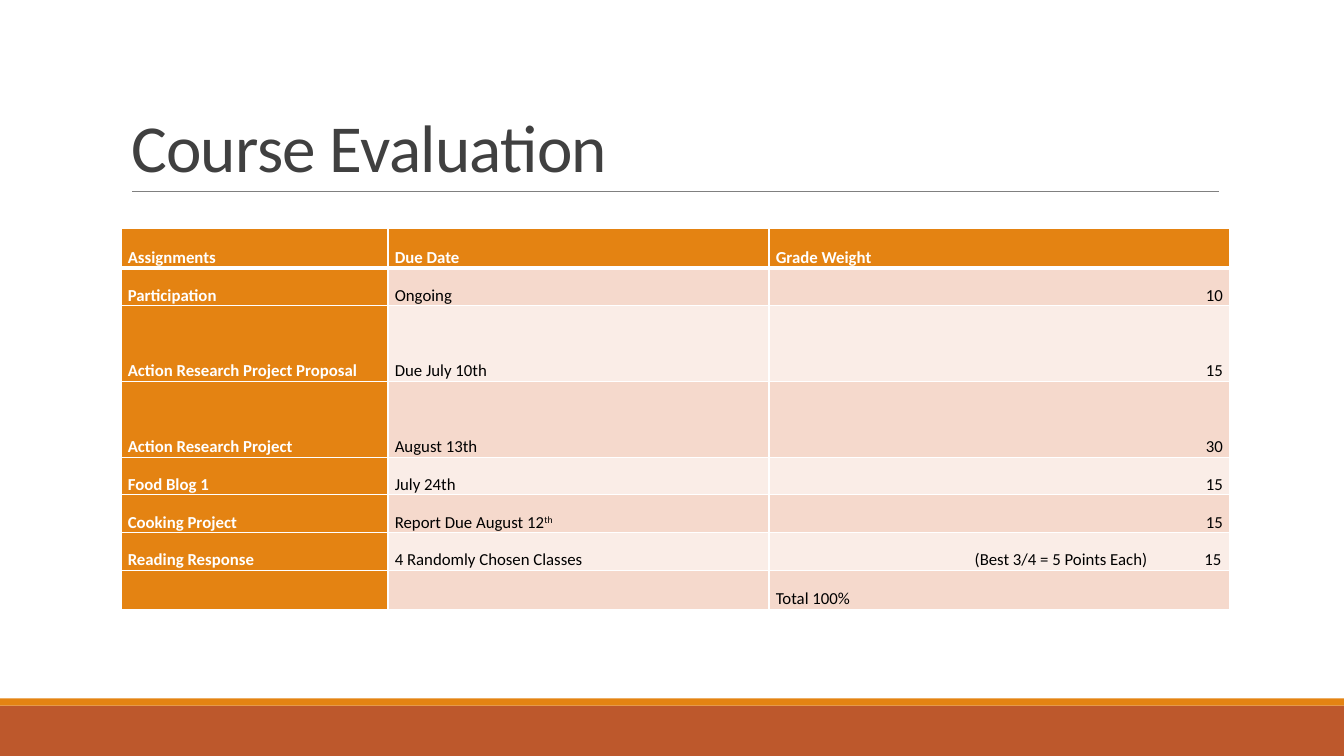
from dataclasses import dataclass

from lxml import etree
from pptx import Presentation
from pptx.dml.color import RGBColor
from pptx.enum.shapes import MSO_CONNECTOR, MSO_SHAPE
from pptx.enum.text import MSO_ANCHOR, MSO_AUTO_SIZE, PP_ALIGN
from pptx.oxml.ns import qn
from pptx.util import Cm, Pt

RECT = MSO_SHAPE.RECTANGLE
LINE = MSO_CONNECTOR.STRAIGHT
BOTTOM = MSO_ANCHOR.BOTTOM
NO_FIT = MSO_AUTO_SIZE.NONE
LEFT, RIGHT = PP_ALIGN.LEFT, PP_ALIGN.RIGHT


@dataclass(frozen=True)
class Theme:
    font: str = "Calibri"
    title: int = 48
    body: int = 12
    ink: str = "404040"
    text: str = "000000"
    white: str = "FFFFFF"
    orange: str = "E48312"
    rust: str = "BD582C"
    rule: str = "808080"
    bands: tuple = ("FAEDE7", "F5D9CC")


THEME = Theme()
WIDTH, HEIGHT = 33.87, 19.05
COLS = (6.73, 9.6, 11.61)
SHORT, TALL = 0.95, 1.91

# Each row: height, then the three cells; ^ starts a superscript
ROWS = (
    (1.0, "Assignments", "Due Date", "Grade Weight"),
    (SHORT, "Participation", "Ongoing", "10"),
    (TALL, "Action Research Project Proposal", "Due July 10th", "15"),
    (TALL, "Action Research Project", "August 13th", "30"),
    (SHORT, "Food Blog 1", "July 24th", "15"),
    (SHORT, "Cooking Project", "Report Due August 12^th", "15"),
    (SHORT, "Reading Response", "4 Randomly Chosen Classes",
     "\t(Best 3/4 = 5 Points Each)\t15"),
    (0.98, "", "", "Total 100%"),
)
TABS = (9.37, 11.23)


def color(code):
    return RGBColor.from_string(code)


def style(para, size, code, bold=False):
    font = para.font
    font.name, font.size, font.bold = THEME.font, Pt(size), bold
    font.color.rgb = color(code)


def add_bar(slide, left, top, width, height, code):
    bar = slide.shapes.add_shape(RECT, Cm(left), Cm(top), Cm(width), Cm(height))
    bar.shadow.inherit = False
    bar.fill.solid()
    bar.fill.fore_color.rgb = color(code)
    bar.line.fill.background()


def add_foot(slide, left, top, width, height):
    strip = 0.18
    add_bar(slide, left, top + strip, width, height - strip, THEME.rust)
    add_bar(slide, left, top, width, strip, THEME.orange)


def add_title(slide, left, top, width, height, words):
    # Rule under the title
    inset, base = 0.28, top + height
    rule = slide.shapes.add_connector(
        LINE, Cm(left + inset), Cm(base), Cm(left + width - 0.26), Cm(base))
    rule.line.color.rgb = color(THEME.rule)
    rule.line.width = Pt(0.5)
    etree.SubElement(rule._element.spPr, qn("a:effectLst"))

    # Title text
    title = slide.shapes.title
    title.left, title.top = Cm(left), Cm(top)
    title.width, title.height = Cm(width), Cm(height)
    frame = title.text_frame
    frame.word_wrap = True
    frame.auto_size = NO_FIT
    frame.vertical_anchor = BOTTOM
    para = frame.paragraphs[0]
    para.alignment = LEFT
    para.line_spacing = 0.85
    style(para, THEME.title, THEME.ink)
    run = para.add_run()
    run.text = words
    run._r.get_or_add_rPr().set("spc", "-50")


def add_edges(cell, row):
    props = cell._tc.get_or_add_tcPr()
    heavy = {(0, "lnB"), (1, "lnT")}
    for side in ("lnL", "lnR", "lnT", "lnB"):
        width = Pt(3 if (row, side) in heavy else 1)
        edge = etree.SubElement(props, qn("a:" + side), w=str(width))
        fill = etree.SubElement(edge, qn("a:solidFill"))
        etree.SubElement(fill, qn("a:srgbClr"), val=THEME.white)


def add_tabs(para):
    tabs = etree.SubElement(para._p.get_or_add_pPr(), qn("a:tabLst"))
    for stop in TABS:
        etree.SubElement(tabs, qn("a:tab"), pos=str(Cm(stop)), algn="r")


def fill_cell(cell, row, col, words):
    head = row == 0 or col == 0
    cell.margin_left = cell.margin_right = Cm(0.17)
    cell.margin_top = cell.margin_bottom = 0
    cell.vertical_anchor = BOTTOM
    add_edges(cell, row)
    cell.fill.solid()
    cell.fill.fore_color.rgb = color(THEME.orange if head else THEME.bands[row % 2])

    para = cell.text_frame.paragraphs[0]
    para.alignment = RIGHT if words.isdigit() else LEFT
    if "\t" in words:
        add_tabs(para)
    style(para, THEME.body, THEME.white if head else THEME.text, head)
    main, _, power = words.partition("^")
    if main:
        para.add_run().text = main
    if power:
        run = para.add_run()
        run.text = power
        run._r.get_or_add_rPr().set("baseline", "30000")


def add_grades(slide, left, top, width, height):
    frame = slide.shapes.add_table(
        len(ROWS), len(COLS), Cm(left), Cm(top), Cm(width), Cm(height))
    table = frame.table
    table.first_row = table.horz_banding = False
    for col, size in enumerate(COLS):
        table.columns[col].width = Cm(size)
    for row, (tall, *texts) in enumerate(ROWS):
        table.rows[row].height = Cm(tall)
        for col, words in enumerate(texts):
            fill_cell(table.cell(row, col), row, col, words)


def main():
    deck = Presentation()
    deck.slide_width, deck.slide_height = Cm(WIDTH), Cm(HEIGHT)
    slide = deck.slides.add_slide(deck.slide_layouts[5])
    left, width = 3.05, sum(COLS)
    add_foot(slide, 0, 17.6, WIDTH, HEIGHT - 17.6)
    add_title(slide, left, 0.79, width, 4.04, "Course Evaluation")
    add_grades(slide, left, 5.75, width, sum(row[0] for row in ROWS))
    deck.save("out.pptx")


if __name__ == "__main__":
    main()
